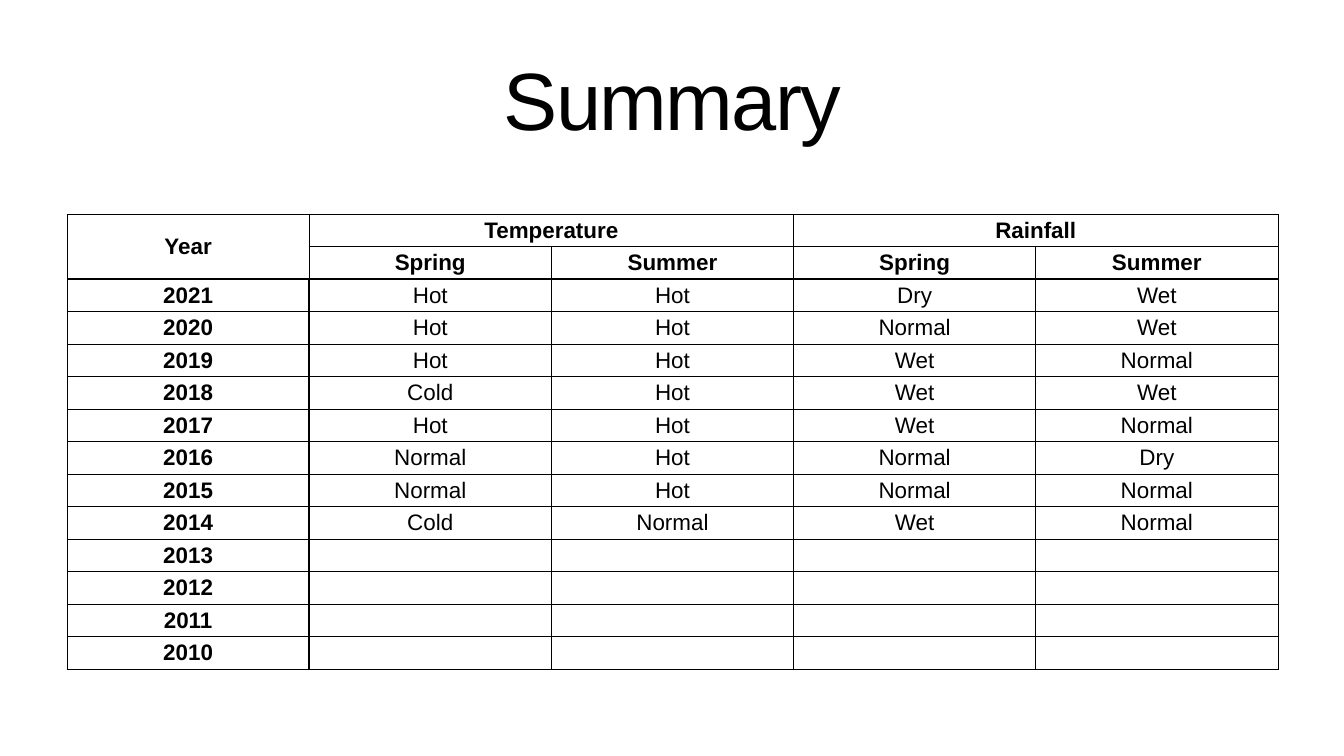
from pptx import Presentation
from pptx.dml.color import RGBColor
from pptx.enum.text import MSO_ANCHOR, MSO_AUTO_SIZE, PP_ALIGN
from pptx.oxml import parse_xml
from pptx.oxml.ns import nsdecls
from pptx.util import Inches, Pt

TITLE = "Summary"
HEADERS = [
    ["Year", "Temperature", "", "Rainfall", ""],
    ["", "Spring", "Summer", "Spring", "Summer"],
]
SEASONS = [
    ["2021", "Hot", "Hot", "Dry", "Wet"],
    ["2020", "Hot", "Hot", "Normal", "Wet"],
    ["2019", "Hot", "Hot", "Wet", "Normal"],
    ["2018", "Cold", "Hot", "Wet", "Wet"],
    ["2017", "Hot", "Hot", "Wet", "Normal"],
    ["2016", "Normal", "Hot", "Normal", "Dry"],
    ["2015", "Normal", "Hot", "Normal", "Normal"],
    ["2014", "Cold", "Normal", "Wet", "Normal"],
    ["2013", "", "", "", ""],
    ["2012", "", "", "", ""],
    ["2011", "", "", "", ""],
    ["2010", "", "", "", ""],
]
MERGES = [((0, 0), (1, 0)), ((0, 1), (0, 2)), ((0, 3), (0, 4))]
COLORS = {"ink": "000000", "paper": "FFFFFF"}
FONT = "Arial"
WIDTH, HEIGHT = 26.67, 15
LEFT, TOP = 1.33, 4.25
TABLE_W, TABLE_H = 24.03, 9.03
INSET = Inches(0.06)
THIN, THICK = 1, 3


def rgb(name):
    return RGBColor.from_string(COLORS[name])


def add_run(p, text, size, bold=False):
    p.alignment = PP_ALIGN.CENTER
    r = p.add_run()
    r.text = text
    r.font.name, r.font.size, r.font.bold = FONT, Pt(size), bold
    r.font.color.rgb = rgb("ink")
    return r


def set_insets(box):
    box.margin_left = box.margin_right = INSET
    box.margin_top = box.margin_bottom = INSET
    box.vertical_anchor = MSO_ANCHOR.MIDDLE


def set_borders(cell, row, col):
    head = len(HEADERS)
    widths = {
        "lnL": THICK if col == 1 and row >= head else THIN,
        "lnR": THICK if col == 0 and row >= head else THIN,
        "lnT": THICK if row == head else THIN,
        "lnB": THICK if row == head - 1 or (row, col) == (0, 0) else THIN,
    }
    tcPr = cell._tc.get_or_add_tcPr()
    for i, (tag, width) in enumerate(widths.items()):
        tcPr.insert(i, parse_xml(
            f'<a:{tag} {nsdecls("a")} w="{Pt(width)}"><a:solidFill>'
            f'<a:srgbClr val="{COLORS["ink"]}"/></a:solidFill></a:{tag}>'))


def add_title(s):
    sp = s.shapes.title
    sp.left, sp.top = Inches(LEFT), 0
    sp.width, sp.height = Inches(TABLE_W), Inches(TOP)
    tf = sp.text_frame
    tf.auto_size, tf.word_wrap = MSO_AUTO_SIZE.NONE, True
    set_insets(tf)
    p = tf.paragraphs[0]
    p.line_spacing = 0.8
    r = add_run(p, TITLE, 116)
    r.font._element.set("spc", "-230")


def add_season_table(s):
    rows = HEADERS + SEASONS
    n_rows, n_cols = len(rows), len(rows[0])
    table = s.shapes.add_table(n_rows, n_cols, Inches(LEFT), Inches(TOP),
                               Inches(TABLE_W), Inches(TABLE_H)).table
    table.first_row = table.horz_banding = False
    for column in table.columns:
        column.width = Inches(TABLE_W / n_cols)
    for row in table.rows:
        row.height = Inches(TABLE_H / n_rows)
    for i, row in enumerate(rows):
        for j, text in enumerate(row):
            cell = table.cell(i, j)
            cell.fill.solid()
            cell.fill.fore_color.rgb = rgb("paper")
            set_insets(cell)
            set_borders(cell, i, j)
            if text:
                add_run(cell.text_frame.paragraphs[0], text, 32,
                        bold=i < len(HEADERS) or j == 0)
    for first, last in MERGES:
        table.cell(*first).merge(table.cell(*last))


def main():
    prs = Presentation()
    prs.slide_width, prs.slide_height = Inches(WIDTH), Inches(HEIGHT)
    s = prs.slides.add_slide(prs.slide_layouts[5])
    add_title(s)
    add_season_table(s)
    prs.save("out.pptx")


if __name__ == "__main__":
    main()
